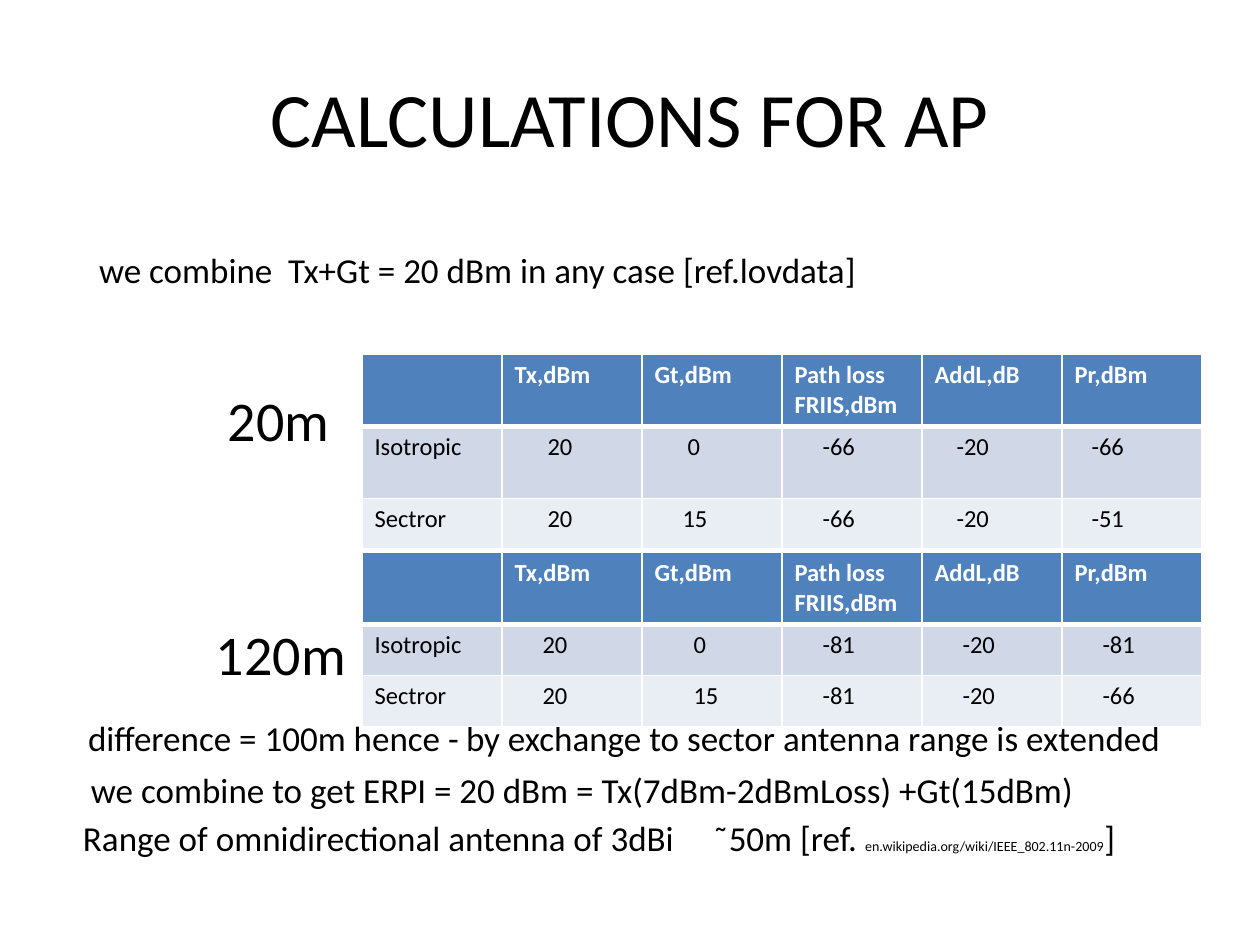
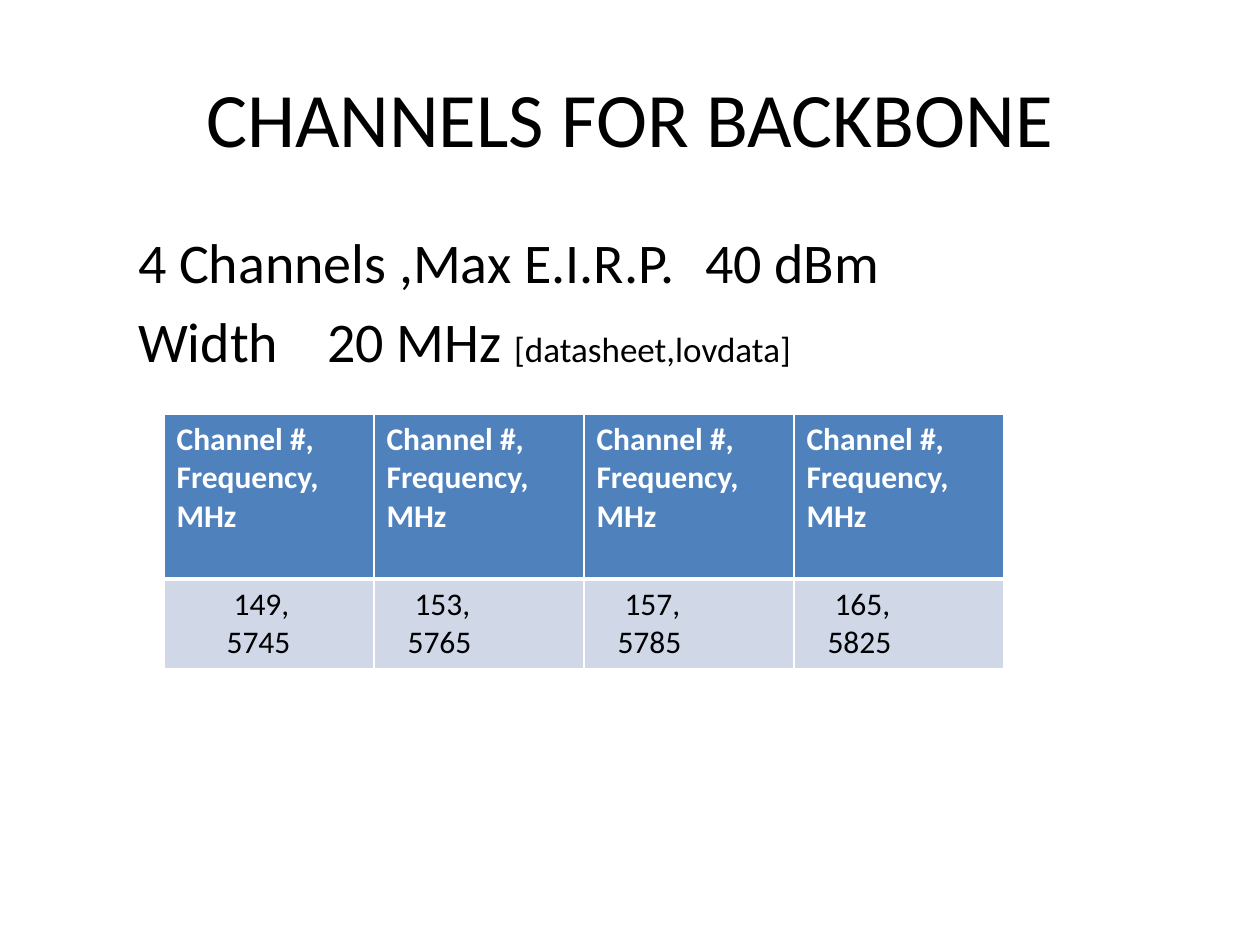
from lxml import etree
from pptx import Presentation
from pptx.dml.color import RGBColor
from pptx.enum.text import MSO_ANCHOR, MSO_AUTO_SIZE, PP_ALIGN
from pptx.oxml.ns import qn
from pptx.util import Pt

MIDDLE, TOP = MSO_ANCHOR.MIDDLE, MSO_ANCHOR.TOP
NO_FIT = MSO_AUTO_SIZE.NONE
CENTER = PP_ALIGN.CENTER
FONT = "Calibri"
BLACK, WHITE = "000000", "FFFFFF"
ROW_FILLS = ["4F81BD", "D0D8E8", "E9EDF4"]


def px(n):
    return round(n * 914400 / 126)


def add_run(p, text, size, color=BLACK, bold=False):
    r = p.add_run()
    r.text = text
    r.font.name = FONT
    r.font.size = Pt(size)
    r.font.bold = bold
    r.font.color.rgb = RGBColor.from_string(color)


power_header = [[(text, 0) for text in cell.split("\n")] if cell else [] for cell in
                ["", "Tx,dBm", "Gt,dBm", "Path loss\nFRIIS,dBm", "AddL,dB", "Pr,dBm"]]
channel_header = [[("Channel #,", 0), ("Frequency,", 0), ("MHz", 0)]] * 4

slides = [
    {
        "title": "CALCULATIONS FOR AP",
        "body_height": 688,
        "body_margins": (20, 28),
        "body": [
            (0, 16, 206, [("we combine\tTx+Gt = 20 dBm in any case [ref.lovdata]", 20)]),
            (95, 145, None, [("20m", 32)]),
            (167, 133, None, [("120m", 32)]),
            (30, 5, 392, [("difference = 100m hence -\tby exchange to sector antenna range is extended", 20)]),
            (10, 8, None, [("we combine to get ERPI = 20 dBm = Tx(7dBm-2dBmLoss) +Gt(15dBm)", 20)]),
            (6, 0, 618, [("Range of omnidirectional antenna of 3dBi\t῀50m [ref. ", 20),
                         ("en.wikipedia.org/wiki/IEEE_802.11n-2009", 8), ("]", 20)]),
        ],
        "tables": [
            (362, 354, 140, [72, 72, 51], 14, [
                power_header,
                [[("Isotropic", 0)], [("20", 33)], [("0", 33)], [("-66", 28)], [("-20", 22)], [("-66", 17)]],
                [[("Sectror", 0)], [("20", 33)], [("15", 28)], [("-66", 28)], [("-20", 22)], [("-51", 17)]],
            ]),
            (362, 552, 140, [72, 51, 51], 14, [
                power_header,
                [[("Isotropic", 0)], [("20", 28)], [("0", 39)], [("-81", 28)], [("-20", 28)], [("-81", 28)]],
                [[("Sectror", 0)], [("20", 28)], [("15", 39)], [("-81", 28)], [("-20", 28)], [("-66", 28)]],
            ]),
        ],
    },
    {
        "title": "CHANNELS FOR BACKBONE",
        "body_height": 624,
        "body_margins": (75, 8),
        "body": [
            (0, 0, 575, [("4 Channels ,Max E.I.R.P.\t40 dBm", 32)]),
            (11, 0, 167, [("Width\t20 MHz ", 32), ("[datasheet,lovdata]", 20)]),
        ],
        "tables": [
            (164, 414, 210, [165, 89], 18, [
                channel_header,
                [[("149,", 57), ("5745", 50)], [("153,", 28), ("5765", 21)],
                 [("157,", 28), ("5785", 21)], [("165,", 28), ("5825", 21)]],
            ]),
        ],
    },
]

prs = Presentation()
prs.slide_width, prs.slide_height = px(1260), px(945)

for content in slides:
    s = prs.slides.add_slide(prs.slide_layouts[1])
    s.background.fill.solid()
    s.background.fill.fore_color.rgb = RGBColor.from_string(WHITE)

    title, body = s.placeholders
    title.left, title.top, title.width, title.height = px(63), px(38), px(1134), px(158)
    title.text_frame.vertical_anchor = MIDDLE
    p = title.text_frame.paragraphs[0]
    p.alignment = CENTER
    add_run(p, content["title"], 44)

    body.left, body.top, body.width = px(63), px(220), px(1134)
    body.height = px(content["body_height"])
    tf = body.text_frame
    tf.word_wrap = True
    tf.auto_size = NO_FIT
    tf.vertical_anchor = TOP
    margin_left, margin_top = content["body_margins"]
    tf.margin_left, tf.margin_top = px(margin_left), px(margin_top)
    for i, (before, indent, tab, runs) in enumerate(content["body"]):
        p = tf.add_paragraph() if i else tf.paragraphs[0]
        pPr = p._p.get_or_add_pPr()
        pPr.set("marL", str(px(indent)))
        pPr.set("indent", "0")
        etree.SubElement(pPr, qn("a:buNone"))
        if tab:
            tabs = etree.SubElement(pPr, qn("a:tabLst"))
            etree.SubElement(tabs, qn("a:tab"), pos=str(px(tab)), algn="l")
        p.space_before = px(before)
        for text, size in runs:
            add_run(p, text, size)

    for left, top, col_width, heights, size, rows in content["tables"]:
        cols = len(rows[0])
        table = s.shapes.add_table(len(rows), cols, px(left), px(top),
                                   px(col_width * cols), px(sum(heights))).table
        for col in table.columns:
            col.width = px(col_width)
        for i, row in enumerate(rows):
            table.rows[i].height = px(heights[i])
            for j, lines in enumerate(row):
                cell = table.cell(i, j)
                tcPr = cell._tc.get_or_add_tcPr()
                widths = {"L": 1, "R": 1, "T": 3 if i == 1 else 1, "B": 3 if i == 0 else 1}
                for side, width in widths.items():
                    ln = etree.SubElement(tcPr, qn("a:ln" + side), w=str(Pt(width)))
                    fill = etree.SubElement(ln, qn("a:solidFill"))
                    etree.SubElement(fill, qn("a:srgbClr"), val=WHITE)
                cell.fill.solid()
                cell.fill.fore_color.rgb = RGBColor.from_string(ROW_FILLS[i])
                tf = cell.text_frame
                for k, (text, indent) in enumerate(lines):
                    p = tf.add_paragraph() if k else tf.paragraphs[0]
                    p._p.get_or_add_pPr().set("marL", str(px(indent)))
                    add_run(p, text, size, BLACK if i else WHITE, i == 0)

prs.save("out.pptx")
